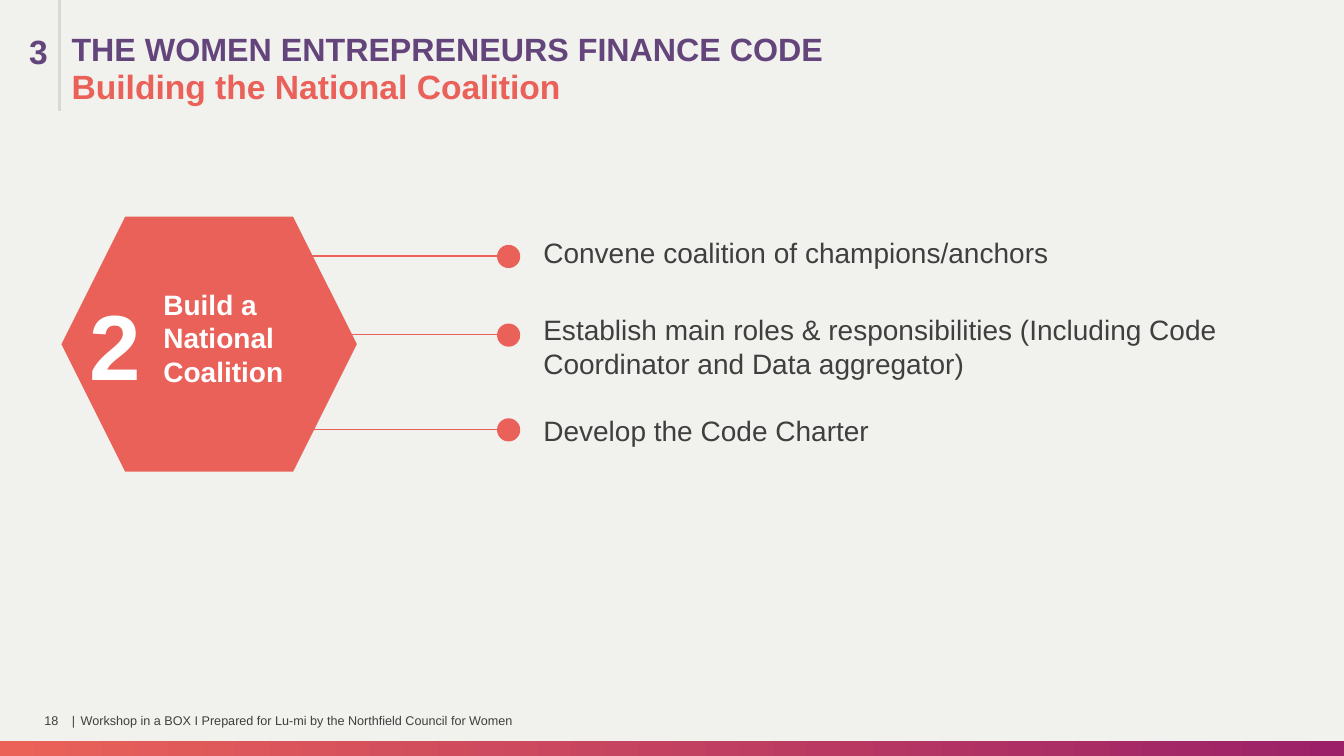
from dataclasses import dataclass

from lxml.etree import SubElement
from pptx import Presentation
from pptx.dml.color import RGBColor
from pptx.enum.shapes import MSO_CONNECTOR, MSO_SHAPE
from pptx.enum.text import MSO_ANCHOR, PP_ALIGN
from pptx.oxml.ns import qn
from pptx.util import Pt

EMU_PER_PX = 9144
SLIDE_WIDTH, SLIDE_HEIGHT = 1333, 750


def px(length):
    return length * EMU_PER_PX


@dataclass(frozen=True)
class Theme:
    font: str = "Arial"
    background: str = "F1F1EE"
    coral: str = "EA6159"
    purple: str = "64457B"
    ink: str = "3F3F3F"
    white: str = "FFFFFF"
    rule: str = "D8D8D8"
    band: tuple = ("9B2068", "EB6258")
    footer_size: int = 9
    body_size: int = 20
    title_size: int = 23
    heading_size: int = 24
    step_size: int = 66


class SlideBuilder:
    def __init__(self, slide, theme):
        self.slide = slide
        self.theme = theme
        background = slide.background.fill
        background.solid()
        background.fore_color.rgb = RGBColor.from_string(theme.background)

    def shape(self, kind, left, top, width, height, color=None):
        shape = self.slide.shapes.add_shape(kind, px(left), px(top), px(width), px(height))
        shape.shadow.inherit = False
        shape.line.fill.background()
        if color:
            shape.fill.solid()
            shape.fill.fore_color.rgb = RGBColor.from_string(color)
        return shape

    def gradient_band(self, left, top, width, height):
        fill = self.shape(MSO_SHAPE.RECTANGLE, left, top, width, height).fill
        fill.gradient()
        fill.gradient_angle = 180
        for stop, color in zip(fill.gradient_stops, self.theme.band):
            stop.color.rgb = RGBColor.from_string(color)

    def line(self, start, end, color, weight):
        line = self.slide.shapes.add_connector(
            MSO_CONNECTOR.STRAIGHT, *map(px, start), *map(px, end))
        line.line.color.rgb = RGBColor.from_string(color)
        line.line.width = Pt(weight)
        SubElement(line._element.spPr, qn("a:effectLst"))

    def text(self, wording, left, top, width, height, size, color,
             bold=False, indent=0, inset=(10, 5),
             anchor=MSO_ANCHOR.TOP, align=PP_ALIGN.LEFT):
        """Add a text box; indent widens its left inset."""
        box = self.slide.shapes.add_textbox(px(left), px(top), px(width), px(height))
        frame = box.text_frame
        frame.word_wrap = True
        frame.vertical_anchor = anchor
        side, end = inset
        frame.margin_left, frame.margin_right = px(side + indent), px(side)
        frame.margin_top = frame.margin_bottom = px(end)
        paragraph = frame.paragraphs[0]
        paragraph.text = wording
        paragraph.alignment = align
        font = paragraph.font
        font.name, font.size, font.bold = self.theme.font, Pt(size), bold
        font.color.rgb = RGBColor.from_string(color)

    def footer(self, wording, left, width, align=PP_ALIGN.LEFT):
        self.text(wording, left, 695, width, 40, self.theme.footer_size, self.theme.ink,
                  inset=(0, 0), anchor=MSO_ANCHOR.MIDDLE, align=align)

    def action(self, wording, line_start, line_y, text_top, width, height):
        """Add a line from the hexagon to a dot, with its action beside it."""
        dot_left, dot = 493, 23
        self.line((line_start, line_y), (dot_left + dot // 2, line_y), self.theme.coral, 0.75)
        self.shape(MSO_SHAPE.OVAL, dot_left, line_y - dot // 2, dot, dot, self.theme.coral)
        self.text(wording, 529, text_top, width, height, self.theme.body_size, self.theme.ink)


def main():
    theme = Theme()
    presentation = Presentation()
    presentation.slide_width, presentation.slide_height = px(SLIDE_WIDTH), px(SLIDE_HEIGHT)
    builder = SlideBuilder(presentation.slides.add_slide(presentation.slide_layouts[6]), theme)

    builder.gradient_band(0, 735, SLIDE_WIDTH, 15)

    builder.text("3", 0, 26, 90, 50, theme.heading_size, theme.purple, bold=True, indent=19)
    builder.text("THE WOMEN ENTREPRENEURS FINANCE CODE", 42, 24, 1219, 50,
                 theme.title_size, theme.purple, bold=True, indent=19)
    builder.text("Building the National Coalition", 59, 60, 1113, 50,
                 theme.heading_size, theme.coral, bold=True, indent=2)
    builder.line((59, 0), (59, 110), theme.rule, 2.25)

    builder.shape(MSO_SHAPE.HEXAGON, 61, 215, 293, 253, theme.coral)
    builder.text("Build a National Coalition", 83, 280, 261, 111,
                 theme.body_size, theme.white, bold=True, indent=69)
    builder.text("2", 79, 281, 60, 121, theme.step_size, theme.white, bold=True)

    actions = [
        ("Convene coalition of champions/anchors", 303, 254, 229, 582, 50),
        ("Establish main roles & responsibilities (Including Code Coordinator "
         "and Data aggregator)", 310, 332, 305, 707, 78),
        ("Develop the Code Charter", 311, 426, 405, 707, 78),
    ]
    for action in actions:
        builder.action(*action)

    builder.footer("18", 44, 22)
    builder.footer("|", 68, 10, PP_ALIGN.CENTER)
    builder.footer("Workshop in a BOX I Prepared for Lu-mi by the Northfield Council for Women",
                   80, 571)

    presentation.save("out.pptx")


if __name__ == "__main__":
    main()
